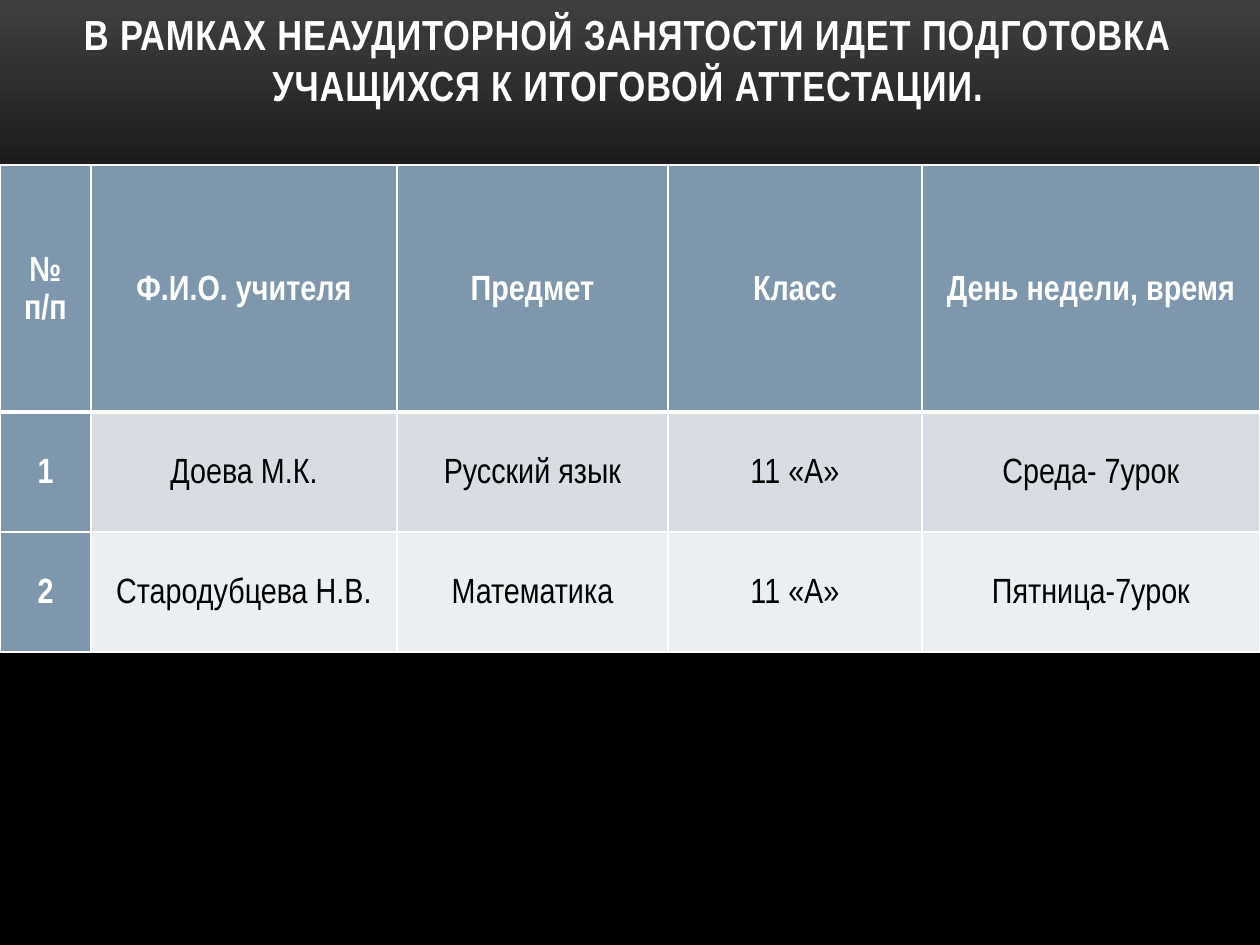
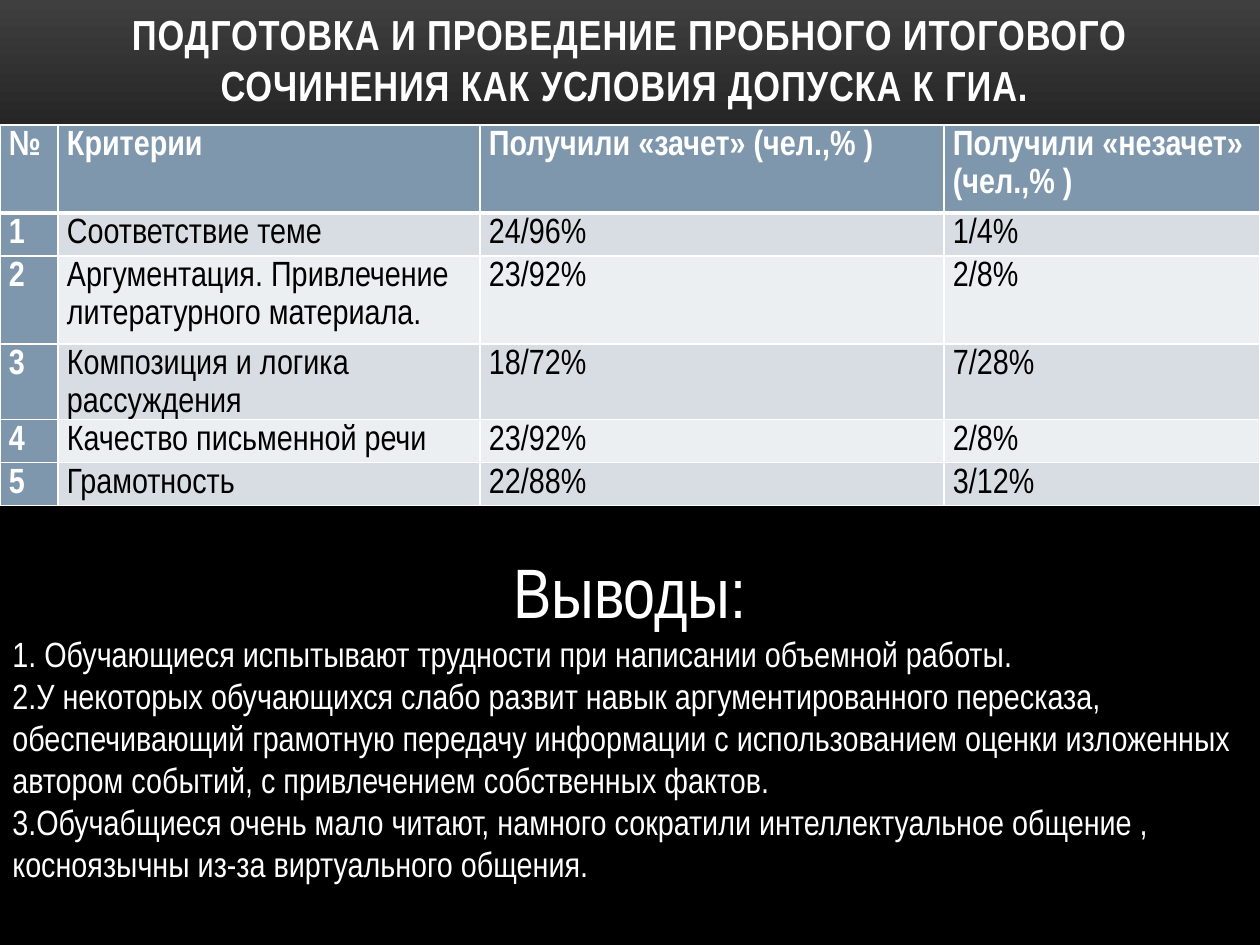
from copy import deepcopy
from dataclasses import dataclass

from lxml.etree import SubElement
from pptx import Presentation
from pptx.dml.color import RGBColor
from pptx.enum.text import MSO_ANCHOR, MSO_AUTO_SIZE, PP_ALIGN
from pptx.oxml.ns import qn
from pptx.util import Emu, Pt


@dataclass(frozen=True)
class Theme:
    """Hold the shared colours, font and type sizes."""

    font: str = "Arial Narrow"
    white: str = "FFFFFF"
    black: str = "000000"
    glow: str = "3F3F3F"
    head: str = "7E97AD"
    bands: tuple = ("D8DDE3", "ECEFF1")
    title: int = 24
    text: int = 20
    large: int = 40


THEME = Theme()
WIDE, HIGH = 1260, 945

PLAN = [
    ["№\nп/п", "Ф.И.О. учителя", "Предмет", "Класс", "День недели, время"],
    ["1", "Доева М.К.", "Русский язык", "11 «А»", "Среда- 7урок"],
    ["2", "Стародубцева Н.В.", "Математика", "11 «А»", "Пятница-7урок"],
]
MARKS = [
    ["№", "Критерии", "Получили «зачет» (чел.,% )", "Получили «незачет» (чел.,% )"],
    ["1", "Соответствие теме", "24/96%", "1/4%"],
    ["2", "Аргументация. Привлечение литературного материала.", "23/92%", "2/8%"],
    ["3", "Композиция и логика рассуждения", "18/72%", "7/28%"],
    ["4", "Качество письменной речи", "23/92%", "2/8%"],
    ["5", "Грамотность", "22/88%", "3/12%"],
]
NOTES = [
    "Выводы:",
    "1. Обучающиеся испытывают трудности при написании объемной работы.",
    "2.У некоторых обучающихся слабо развит навык аргументированного пересказа, "
    "обеспечивающий грамотную передачу информации с использованием оценки "
    "изложенных автором событий, с привлечением собственных фактов.",
    "3.Обучабщиеся очень мало читают, намного сократили интеллектуальное общение , "
    "косноязычны из-за виртуального общения.",
]


def px(count):
    """Turn pixels into EMU."""
    return Emu(round(count * 914400 / 126))


def style(para, size, color=THEME.white, bold=False, align=PP_ALIGN.LEFT):
    """Format a paragraph and its runs."""
    para.alignment = align
    for run in para.runs:
        font = run.font
        font.name, font.size, font.bold = THEME.font, Pt(size), bold
        font.color.rgb = RGBColor.from_string(color)


def paint(master):
    """Give the master its dark gradient."""
    fill = master.background.fill
    fill.gradient()
    fill.gradient_angle = 270
    for stop, color, place in zip(fill.gradient_stops, (THEME.glow, THEME.black), (0, 0.31)):
        stop.color.rgb = RGBColor.from_string(color)
        stop.position = place
    stops = next(master.element.iter(qn("a:gsLst")))
    last = deepcopy(stops[-1])
    last.set("pos", "100000")
    stops.append(last)


def add_page(deck, text, box):
    """Add a slide with its title in the given box."""
    page = deck.slides.add_slide(deck.slide_layouts[5])
    title = page.shapes.title
    title.left, title.top, title.width, title.height = map(px, box)
    frame = title.text_frame
    frame.text = text
    frame.word_wrap = True
    frame.auto_size = MSO_AUTO_SIZE.NONE
    frame.vertical_anchor = MSO_ANCHOR.BOTTOM
    para = frame.paragraphs[0]
    style(para, THEME.title, bold=True, align=PP_ALIGN.CENTER)
    para.runs[0].font._element.set("spc", "50")
    return page


def edge(cell, row):
    """Draw white cell borders, thick under the header."""
    props = cell._tc.get_or_add_tcPr()
    thick = {"lnB": row == 0, "lnT": row == 1}
    for side in ("lnL", "lnR", "lnT", "lnB"):
        line = SubElement(props, qn(f"a:{side}"), w=str(Pt(3 if thick.get(side) else 1)))
        SubElement(SubElement(line, qn("a:solidFill")), qn("a:srgbClr"), val=THEME.white)


def fill_cell(cell, text, row, col, align, anchor):
    """Write and format one table cell."""
    key = row == 0 or col == 0
    edge(cell, row)
    cell.fill.solid()
    tone = THEME.head if key else THEME.bands[(row - 1) % 2]
    cell.fill.fore_color.rgb = RGBColor.from_string(tone)
    cell.margin_left = cell.margin_right = px(9)
    cell.margin_top = cell.margin_bottom = 0
    cell.vertical_anchor = anchor
    cell.text_frame.text = text
    for para in cell.text_frame.paragraphs:
        para.line_spacing = 1.15
        style(para, THEME.text, THEME.white if key else THEME.black, key, align)


def add_grid(page, top, data, cols, rows, align=PP_ALIGN.LEFT, anchor=MSO_ANCHOR.TOP):
    """Add a full-width table at the given height."""
    frame = page.shapes.add_table(len(rows), len(cols), 0, px(top), px(sum(cols)), px(sum(rows)))
    table = frame.table
    table.first_col = True
    for col, width in zip(table.columns, cols):
        col.width = px(width)
    for row, height in zip(table.rows, rows):
        row.height = px(height)
    for row, line in enumerate(data):
        for col, text in enumerate(line):
            fill_cell(table.cell(row, col), text, row, col, align, anchor)


def add_notes(page, box):
    """Add the conclusions under a large heading."""
    frame = page.shapes.add_textbox(*map(px, box)).text_frame
    frame.word_wrap = True
    frame.text = "\n".join(NOTES)
    head, *rest = frame.paragraphs
    style(head, THEME.large, align=PP_ALIGN.CENTER)
    for para in rest:
        style(para, THEME.text)


def main():
    """Build both slides and save the deck."""
    deck = Presentation()
    deck.slide_width, deck.slide_height = px(WIDE), px(HIGH)
    paint(deck.slide_master)

    page = add_page(
        deck,
        "В РАМКАХ НЕАУДИТОРНОЙ ЗАНЯТОСТИ ИДЕТ ПОДГОТОВКА УЧАЩИХСЯ К ИТОГОВОЙ АТТЕСТАЦИИ.",
        (-4, 0, WIDE + 4, 116),
    )
    add_grid(page, 165, PLAN, (91, 306, 271, 254, 338), (247, 120, 120),
             PP_ALIGN.CENTER, MSO_ANCHOR.MIDDLE)

    page = add_page(
        deck,
        "ПОДГОТОВКА И ПРОВЕДЕНИЕ ПРОБНОГО ИТОГОВОГО СОЧИНЕНИЯ КАК УСЛОВИЯ ДОПУСКА К ГИА. ",
        (0, 0, WIDE, 116),
    )
    add_grid(page, 125, MARKS, (58, 422, 464, 316), (88, 43, 88, 43, 43, 43))
    add_notes(page, (0, 542, WIDE, 390))
    deck.save("out.pptx")


if __name__ == "__main__":
    main()
